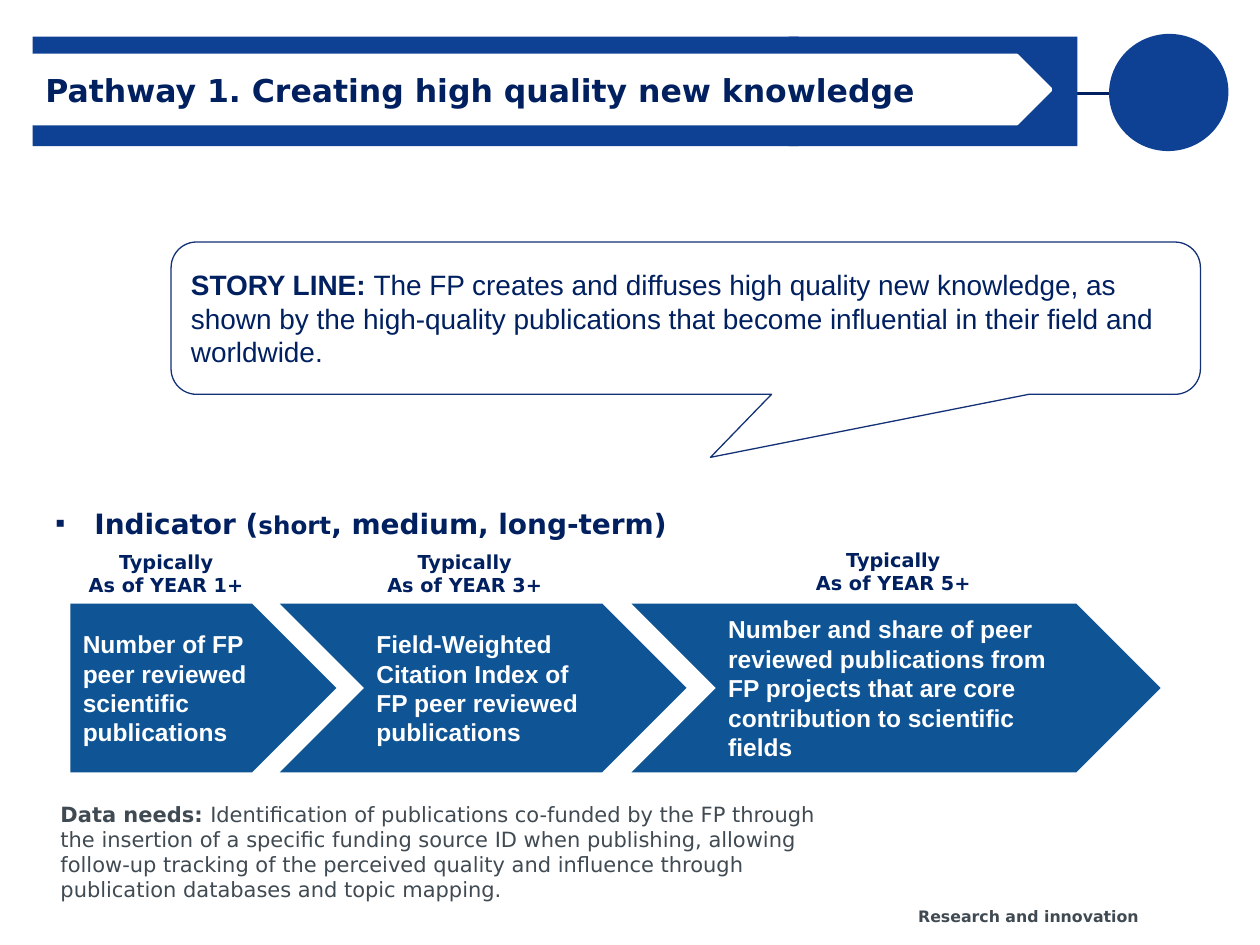
from lxml.etree import SubElement
from pptx import Presentation
from pptx.dml.color import RGBColor
from pptx.enum.shapes import MSO_CONNECTOR, MSO_SHAPE as SHAPE
from pptx.enum.text import MSO_ANCHOR as ANCHOR, MSO_AUTO_SIZE, PP_ALIGN as ALIGN
from pptx.oxml.ns import qn
from pptx.util import Cm, Pt

NAVY, BLUE, ARROW_BLUE, GREY, WHITE = "002060", "0E4194", "0F5494", "404A52", "FFFFFF"
color = RGBColor.from_string

prs = Presentation()
prs.slide_width, prs.slide_height = Cm(25.4), Cm(19.05)
slide = prs.slides.add_slide(prs.slide_layouts[1])
shapes = slide.shapes


def write_text(box, *paragraphs, size=12, font="DejaVu Sans", ink=NAVY,
               align=ALIGN.LEFT, anchor=ANCHOR.TOP, wrap=True):
    """Each paragraph is a list of runs: (text, bold) or (text, bold, size)."""
    frame = box.text_frame
    frame.auto_size = MSO_AUTO_SIZE.NONE
    frame.word_wrap, frame.vertical_anchor = wrap, anchor
    for i, runs in enumerate(paragraphs):
        para = frame.add_paragraph() if i else frame.paragraphs[0]
        para.alignment, para.space_before = align, Pt(0)
        for text, bold, *own_size in runs:
            run = para.add_run()
            run.text = text
            run.font.name, run.font.bold = font, bold
            run.font.size = Pt(own_size[0] if own_size else size)
            run.font.color.rgb = color(ink)


def add_block(kind, left, top, width, height, fill=None, line=None, line_width=0.75):
    block = shapes.add_shape(kind, Cm(left), Cm(top), Cm(width), Cm(height))
    block.shadow.inherit = False
    if fill:
        block.fill.solid()
        block.fill.fore_color.rgb = color(fill)
    else:
        block.fill.background()
    if line:
        block.line.color.rgb = color(line)
        block.line.width = Pt(line_width)
    else:
        block.line.fill.background()
    return block


# Header: link to the circle, blue band, white pennant
link = shapes.add_connector(MSO_CONNECTOR.STRAIGHT, Cm(21.18), Cm(1.88), Cm(22.71), Cm(1.88))
link.line.color.rgb = color(NAVY)
link.line.width = Pt(1.5)
SubElement(link._element.spPr, qn("a:effectLst"))
for left, width in [(0.66, 15.44), (15.9, 5.82)]:
    add_block(SHAPE.RECTANGLE, left, 0.74, width, 2.21, BLUE)
add_block(SHAPE.PENTAGON, 0.66, 1.12, 20.52, 1.37, WHITE, WHITE, 2.25)
circle = add_block(SHAPE.OVAL, 22.38, 0.66, 2.36, 2.41, BLUE)
circle.rotation = 75.1

# Title, brought in front of the pennant
title = shapes.title
title.left, title.top, title.width, title.height = Cm(0.66), Cm(1.12), Cm(20.25), Cm(1.37)
write_text(title, [("Pathway 1. Creating high quality new knowledge", True)],
           size=18, anchor=ANCHOR.MIDDLE)
shapes._spTree.append(title._element)

# Story line
story = add_block(SHAPE.ROUNDED_RECTANGULAR_CALLOUT, 3.45, 4.88, 20.75, 3.07, line="133176")
for i, value in enumerate([0.024, 0.914, 0.167]):
    story.adjustments[i] = value
write_text(story, [("STORY LINE: ", True),
                   ("The FP creates and diffuses high quality new knowledge, as shown by the "
                    "high-quality publications that become influential in their field and "
                    "worldwide.", False)],
           size=16, font="Arial", anchor=ANCHOR.MIDDLE)

# Indicator heading
indicator = slide.placeholders[1]
indicator.left, indicator.top, indicator.width, indicator.height = (
    Cm(0.86), Cm(10.08), Cm(24.05), Cm(0.94))
bullet = indicator.text_frame.paragraphs[0]._p.get_or_add_pPr()
bullet.set("marL", str(Cm(0.79)))
bullet.set("indent", str(-Cm(0.79)))
SubElement(bullet, qn("a:buChar")).set("char", "▪")
write_text(indicator, [("Indicator (", True), ("short", True, 14),
                       (", medium, long-term)", True)], size=16)

# Indicator arrows, each with its time label
stages = [
    (SHAPE.PENTAGON, 1.42, 5.36, "Number of FP peer reviewed scientific publications",
     1.52, 10.97, "As of YEAR 1+"),
    (SHAPE.CHEVRON, 5.64, 8.2, "Field-Weighted Citation Index of FP peer reviewed publications",
     7.54, 10.97, "As of YEAR 3+"),
    (SHAPE.CHEVRON, 12.73, 10.67, "Number and share of peer reviewed publications from FP "
     "projects that are core contribution to scientific fields",
     16.18, 10.92, "As of YEAR 5+"),
]
for kind, left, width, measure, label_left, label_top, year in stages:
    arrow = add_block(kind, left, 12.17, width, 3.4, ARROW_BLUE)
    write_text(arrow, [(measure, True)], size=14, font="Arial", ink=WHITE, anchor=ANCHOR.MIDDLE)
    label = shapes.add_textbox(Cm(label_left), Cm(label_top), Cm(3.66), Cm(1.19))
    write_text(label, [("Typically", True)], [(year, True)],
               size=11, align=ALIGN.CENTER, wrap=False)

# Data needs and footer
needs = shapes.add_textbox(Cm(0.97), Cm(16.03), Cm(16.43), Cm(2.31))
write_text(needs, [("Data needs: ", True),
                   ("Identification of publications co-funded by the FP through the insertion "
                    "of a specific funding source ID when publishing, allowing follow-up "
                    "tracking of the perceived quality and influence through publication "
                    "databases and topic mapping.", False)], ink=GREY)
footer = shapes.add_textbox(Cm(18.26), Cm(18.16), Cm(6.63), Cm(0.64))
write_text(footer, [("Research and innovation", True)], size=9, ink=GREY)

prs.save("out.pptx")
